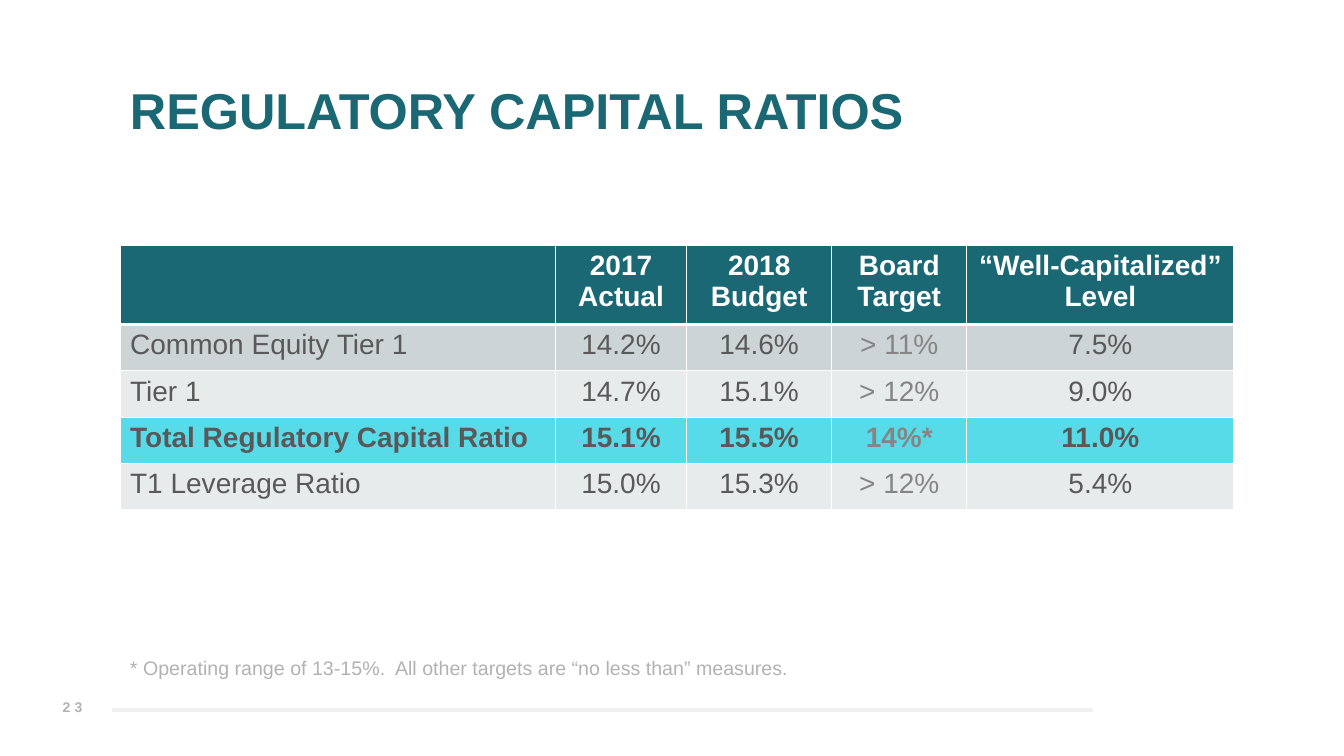
from lxml.etree import SubElement
from pptx import Presentation
from pptx.dml.color import RGBColor
from pptx.enum.shapes import MSO_CONNECTOR
from pptx.enum.text import MSO_ANCHOR, PP_ALIGN
from pptx.oxml.ns import qn
from pptx.util import Inches, Pt

COLORS = {
    "teal": "1B6875", "cyan": "58DBE9", "band_dark": "CDD4D6",
    "band_light": "E8EBEC", "white": "FFFFFF", "text": "595959",
    "target": "858585", "note": "B2B2B2", "rule": "F0F0F0",
}


def add_span(para, text, size, color, bold=False):
    span = para.add_run()
    span.text = text
    span.font.name = "Arial"
    span.font.size = Pt(size)
    span.font.bold = bold
    span.font.color.rgb = RGBColor.from_string(COLORS[color])
    return span


def add_box(page, left, top, width, height, anchor):
    box = page.shapes.add_textbox(Inches(left), Inches(top), Inches(width), Inches(height))
    box.text_frame.word_wrap = True
    box.text_frame.vertical_anchor = anchor
    return box.text_frame


deck = Presentation()
deck.slide_width = Inches(13.33)
deck.slide_height = Inches(7.5)
page = deck.slides.add_slide(deck.slide_layouts[6])

# Footer rule and page number
rule = page.shapes.add_connector(
    MSO_CONNECTOR.STRAIGHT, Inches(10.84), Inches(7.04), Inches(1.11), Inches(7.04))
rule.line.color.rgb = RGBColor.from_string(COLORS["rule"])
rule.line.width = Pt(3)
SubElement(rule._element.spPr, qn("a:effectLst"))

number = add_box(page, 0.51, 6.81, 0.42, 0.4, MSO_ANCHOR.MIDDLE)
number.margin_left = number.margin_right = number.margin_top = number.margin_bottom = 0
number.paragraphs[0].alignment = PP_ALIGN.CENTER
span = add_span(number.paragraphs[0], "23", 10, "note", bold=True)
span.font._element.set("spc", "300")

# Title
title = add_box(page, 1.19, 0.4, 11.5, 1.45, MSO_ANCHOR.MIDDLE)
title.paragraphs[0].line_spacing = 0.9
add_span(title.paragraphs[0], "REGULATORY CAPITAL RATIOS", 36, "teal", bold=True)

# Table of ratios
rows = [
    ("", "2017 Actual", "2018 Budget", "Board Target", "“Well-Capitalized” Level"),
    ("Common Equity Tier 1", "14.2%", "14.6%", "> 11%", "7.5%"),
    ("Tier 1", "14.7%", "15.1%", "> 12%", "9.0%"),
    ("Total Regulatory Capital Ratio", "15.1%", "15.5%", "14%*", "11.0%"),
    ("T1 Leverage Ratio", "15.0%", "15.3%", "> 12%", "5.4%"),
]
row_fills = ["teal", "band_dark", "band_light", "cyan", "band_light"]
row_heights = [0.79] + [0.46] * 4
column_widths = [4.32, 1.3, 1.44, 1.34, 2.65]
HEADER_ROW, TOTAL_ROW, TARGET_COLUMN = 0, 3, 3

table = page.shapes.add_table(
    len(rows), len(column_widths), Inches(1.19), Inches(2.43),
    Inches(sum(column_widths)), Inches(sum(row_heights))).table
for column, width in zip(table.columns, column_widths):
    column.width = Inches(width)
for row, height in zip(table.rows, row_heights):
    row.height = Inches(height)

for r, values in enumerate(rows):
    for c, value in enumerate(values):
        cell = table.cell(r, c)

        # White borders, with a heavier line between header and body
        properties = cell._tc.get_or_add_tcPr()
        for side in ("L", "R", "T", "B"):
            heavy = (r, side) in ((HEADER_ROW, "B"), (HEADER_ROW + 1, "T"))
            border = SubElement(properties, qn(f"a:ln{side}"), w=str(Pt(3 if heavy else 1)))
            border_fill = SubElement(border, qn("a:solidFill"))
            SubElement(border_fill, qn("a:srgbClr"), val=COLORS["white"])

        cell.fill.solid()
        cell.fill.fore_color.rgb = RGBColor.from_string(COLORS[row_fills[r]])

        para = cell.text_frame.paragraphs[0]
        para.alignment = PP_ALIGN.CENTER if c else PP_ALIGN.LEFT
        if r == HEADER_ROW:
            color = "white"
        else:
            color = "target" if c == TARGET_COLUMN else "text"
        if value:
            add_span(para, value, 20, color, bold=r in (HEADER_ROW, TOTAL_ROW))

# Footnote
note = add_box(page, 1.19, 6.46, 10.55, 0.35, MSO_ANCHOR.TOP)
add_span(note.paragraphs[0],
         "* Operating range of 13-15%.  All other targets are “no less than” measures.",
         14, "note")

deck.save("out.pptx")
